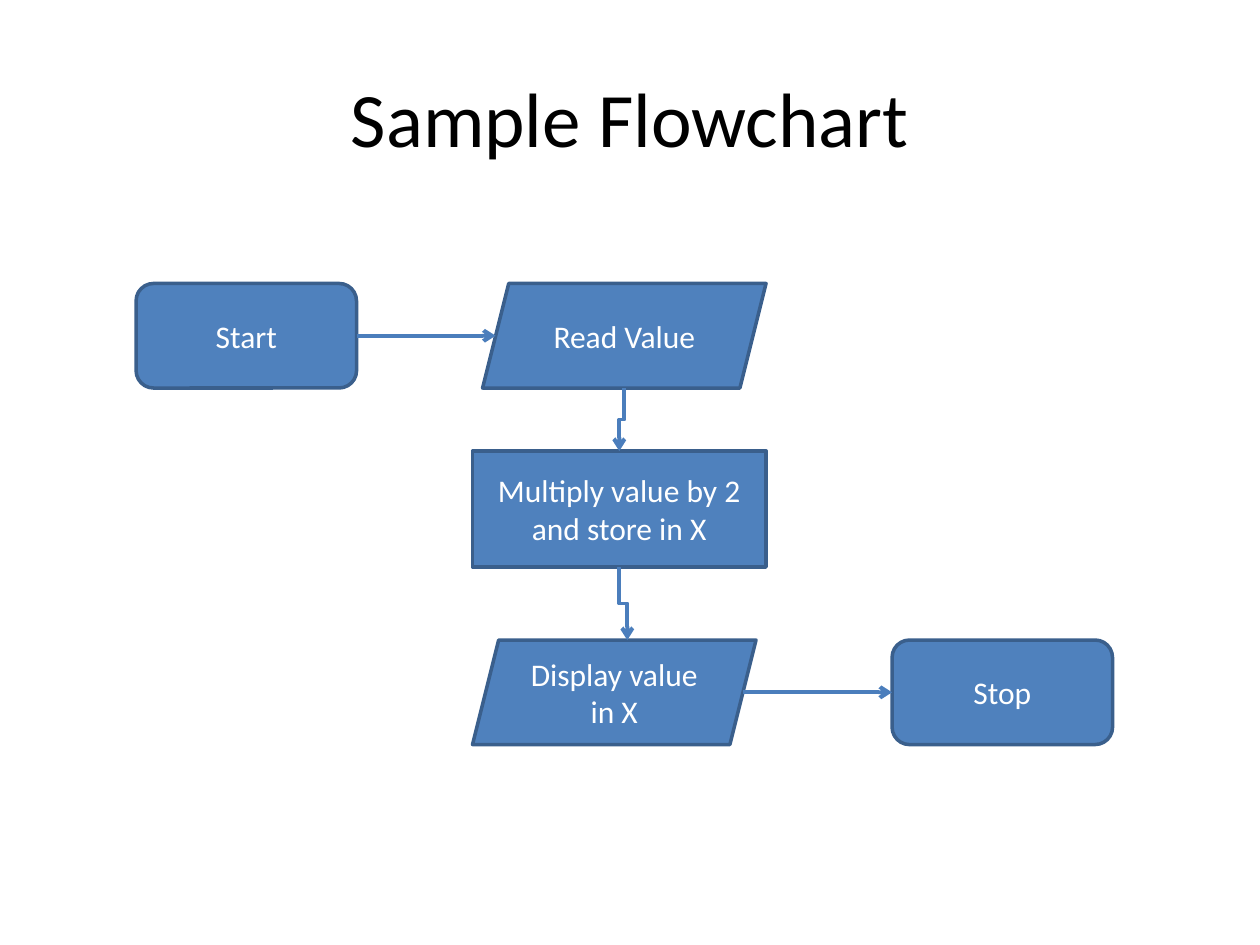
from lxml import etree
from pptx import Presentation
from pptx.dml.color import RGBColor
from pptx.enum.shapes import MSO_CONNECTOR, MSO_SHAPE
from pptx.enum.text import MSO_ANCHOR, PP_ALIGN
from pptx.oxml.ns import qn
from pptx.util import Inches, Pt

ROUNDED = MSO_SHAPE.ROUNDED_RECTANGLE
PARALLELOGRAM = MSO_SHAPE.PARALLELOGRAM
RECTANGLE = MSO_SHAPE.RECTANGLE
ELBOW = MSO_CONNECTOR.ELBOW
MIDDLE = MSO_ANCHOR.MIDDLE
CENTER = PP_ALIGN.CENTER

BLACK = RGBColor(0x00, 0x00, 0x00)
WHITE = RGBColor(0xFF, 0xFF, 0xFF)
BLUE = RGBColor(0x4F, 0x81, 0xBD)
OUTLINE = RGBColor(0x3A, 0x5F, 0x8C)
ARROW = RGBColor(0x4B, 0x7E, 0xBC)

FONT = "Calibri"
LEFT_SIDE, RIGHT_SIDE = 1, 3
QUARTER_TURN = 90 * 60000


def write_text(shape, text, size, color):
    frame = shape.text_frame
    frame.word_wrap = True
    frame.vertical_anchor = MIDDLE
    para = frame.paragraphs[0]
    para.alignment = CENTER
    span = para.add_run()
    span.text = text
    span.font.name = FONT
    span.font.size = Pt(size)
    span.font.color.rgb = color


def add_title(page, text):
    box = page.shapes.add_textbox(Inches(0.5), Inches(0.3), Inches(9), Inches(1.25))
    write_text(box, text, 44, BLACK)


def add_step(page, kind, text, left, top, width, height):
    step = page.shapes.add_shape(
        kind, Inches(left), Inches(top), Inches(width), Inches(height))
    step.shadow.inherit = False
    step.fill.solid()
    step.fill.fore_color.rgb = BLUE
    step.line.color.rgb = OUTLINE
    step.line.width = Pt(2)
    write_text(step, text, 18, WHITE)
    return step


def center_x(step):
    return step.left + step.width // 2


def center_y(step):
    return step.top + step.height // 2


def slant_inset(step):
    return step.height // 8


def add_arrow(page, start_x, start_y, end_x, end_y):
    arrow = page.shapes.add_connector(ELBOW, start_x, start_y, end_x, end_y)
    arrow.line.color.rgb = ARROW
    arrow.line.width = Pt(2.25)
    properties = arrow._element.spPr
    etree.SubElement(properties.find(qn("a:ln")), qn("a:tailEnd"), type="arrow")
    etree.SubElement(properties, qn("a:effectLst"))
    return arrow


def add_down_arrow(page, start_x, start_y, end_x, end_y):
    middle_x, middle_y = (start_x + end_x) // 2, (start_y + end_y) // 2
    half_length = (end_y - start_y) // 2
    half_shift = abs(end_x - start_x) // 2
    direction, turns = (-1, 3) if end_x > start_x else (1, 1)
    arrow = add_arrow(
        page,
        middle_x - direction * half_length, middle_y - half_shift,
        middle_x + direction * half_length, middle_y + half_shift)
    transform = arrow._element.spPr.find(qn("a:xfrm"))
    transform.set("rot", str(turns * QUARTER_TURN))


def main():
    deck = Presentation()
    deck.slide_width, deck.slide_height = Inches(10), Inches(7.5)
    page = deck.slides.add_slide(deck.slide_layouts[6])

    add_title(page, "Sample Flowchart")
    start = add_step(page, ROUNDED, "Start", 1.08, 2.25, 1.75, 0.83)
    read = add_step(page, PARALLELOGRAM, "Read Value", 3.83, 2.25, 2.25, 0.83)
    multiply = add_step(
        page, RECTANGLE, "Multiply value by 2 and store in X", 3.75, 3.58, 2.33, 0.92)
    display = add_step(
        page, PARALLELOGRAM, "Display value in X", 3.75, 5.08, 2.25, 0.83)
    stop = add_step(page, ROUNDED, "Stop", 7.08, 5.08, 1.75, 0.83)

    to_read = add_arrow(
        page, start.left + start.width, center_y(start),
        read.left + slant_inset(read), center_y(read))
    to_read.begin_connect(start, RIGHT_SIDE)
    add_down_arrow(
        page, center_x(read), read.top + read.height,
        center_x(multiply), multiply.top)
    add_down_arrow(
        page, center_x(multiply), multiply.top + multiply.height,
        center_x(display) + slant_inset(display), display.top)
    to_stop = add_arrow(
        page, display.left + display.width - slant_inset(display), center_y(display),
        stop.left, center_y(stop))
    to_stop.end_connect(stop, LEFT_SIDE)

    deck.save("out.pptx")


if __name__ == "__main__":
    main()
